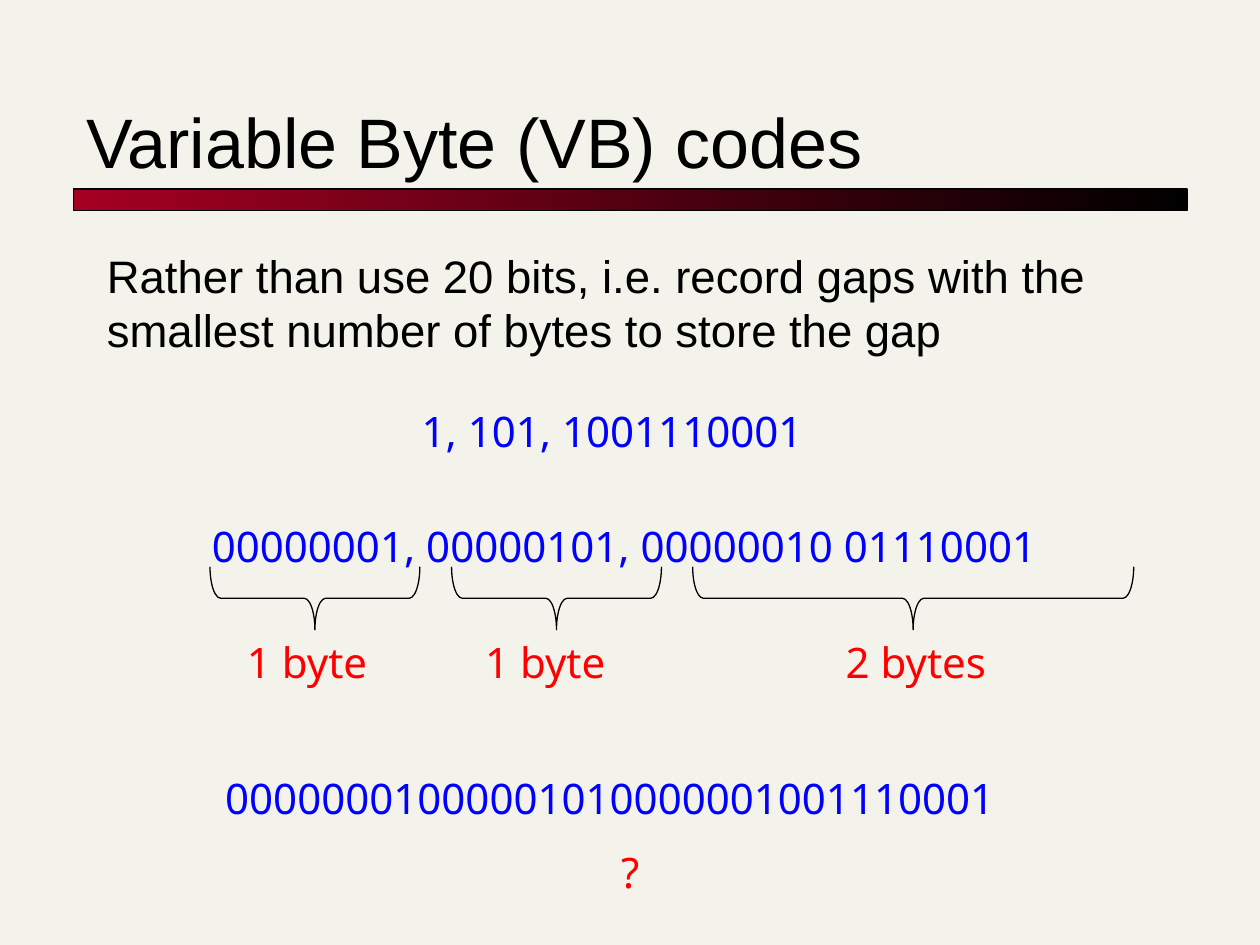
from lxml.etree import SubElement
from pptx import Presentation
from pptx.dml.color import RGBColor
from pptx.enum.shapes import MSO_SHAPE
from pptx.enum.text import MSO_ANCHOR, MSO_AUTO_SIZE, PP_ALIGN
from pptx.oxml.ns import qn
from pptx.util import Cm, Pt

CREAM = RGBColor(0xF4, 0xF3, 0xEB)
CRIMSON = RGBColor(0xA5, 0x00, 0x21)
BLACK = RGBColor(0x00, 0x00, 0x00)
BLUE = RGBColor(0x00, 0x00, 0xFF)
RED = RGBColor(0xFF, 0x00, 0x00)


def write(box, text, size=24, font="Noto Sans", color=BLUE, anchor=MSO_ANCHOR.TOP):
    frame = box.text_frame
    frame.word_wrap = True
    frame.auto_size = MSO_AUTO_SIZE.NONE
    frame.vertical_anchor = anchor
    para = frame.paragraphs[0]
    para.alignment = PP_ALIGN.LEFT
    span = para.add_run()
    span.text = text
    span.font.size = Pt(size)
    span.font.name = font
    span.font.color.rgb = color
    return para


def place(shape, left, top, width, height):
    shape.left, shape.top = Cm(left), Cm(top)
    shape.width, shape.height = Cm(width), Cm(height)


deck = Presentation()
deck.slide_width, deck.slide_height = Cm(25.4), Cm(19.05)
page = deck.slides.add_slide(deck.slide_layouts[1])
page.background.fill.solid()
page.background.fill.fore_color.rgb = CREAM

# Title and the gradient bar under it
title, body = page.placeholders
place(title, 1.48, 1.06, 22.42, 2.75)
write(title, "Variable Byte (VB) codes", size=40, font="Arial", color=BLACK,
      anchor=MSO_ANCHOR.BOTTOM)

bar = page.shapes.add_shape(MSO_SHAPE.RECTANGLE, Cm(1.48), Cm(3.81), Cm(22.45), Cm(0.43))
bar.shadow.inherit = False
bar.fill.gradient()
bar.fill.gradient_angle = 0
for stop, color in zip(bar.fill.gradient_stops, (CRIMSON, BLACK)):
    stop.color.rgb = color
bar.line.color.rgb = BLACK
bar.line.width = Pt(0.75)

# Body sentence without a bullet
place(body, 1.9, 4.87, 21.6, 2.97)
sentence = write(body, "Rather than use 20 bits, i.e. record gaps with the "
                 "smallest number of bytes to store the gap",
                 size=26, font="Arial", color=BLACK)
properties = sentence._p.get_or_add_pPr()
properties.set("marL", "0")
properties.set("indent", "0")
SubElement(properties, qn("a:buNone"))

# Bit strings and labels: text, left, top, width, color
for text, left, top, width, color in (
    ("1, 101, 1001110001", 8.25, 8.05, 9.42, BLUE),
    ("00000001, 00000101, 00000010 01110001", 4.02, 10.37, 19.17, BLUE),
    ("1 byte", 4.73, 12.7, 3.1, RED),
    ("1 byte", 9.53, 12.7, 3.1, RED),
    ("2 bytes", 16.8, 12.7, 3.53, RED),
    ("00000001000001010000001001110001", 4.29, 15.45, 18.36, BLUE),
    ("?", 12.27, 16.93, 0.86, RED),
):
    box = page.shapes.add_textbox(Cm(left), Cm(top), Cm(width), Cm(1.27))
    write(box, text, color=color)

# Braces turned to point down: centre and span across the slide
BRACE_DEPTH, BRACE_MIDDLE = 1.27, 12.06
for centre, extent in ((6.35, 4.23), (11.22, 4.23), (18.41, 8.89)):
    brace = page.shapes.add_shape(
        MSO_SHAPE.LEFT_BRACE, Cm(centre - BRACE_DEPTH / 2), Cm(BRACE_MIDDLE - extent / 2),
        Cm(BRACE_DEPTH), Cm(extent))
    brace.rotation = 270
    brace.adjustments[0] = 0.17
    brace.shadow.inherit = False
    brace.fill.background()
    brace.line.color.rgb = BLACK
    brace.line.width = Pt(0.75)

deck.save("out.pptx")
